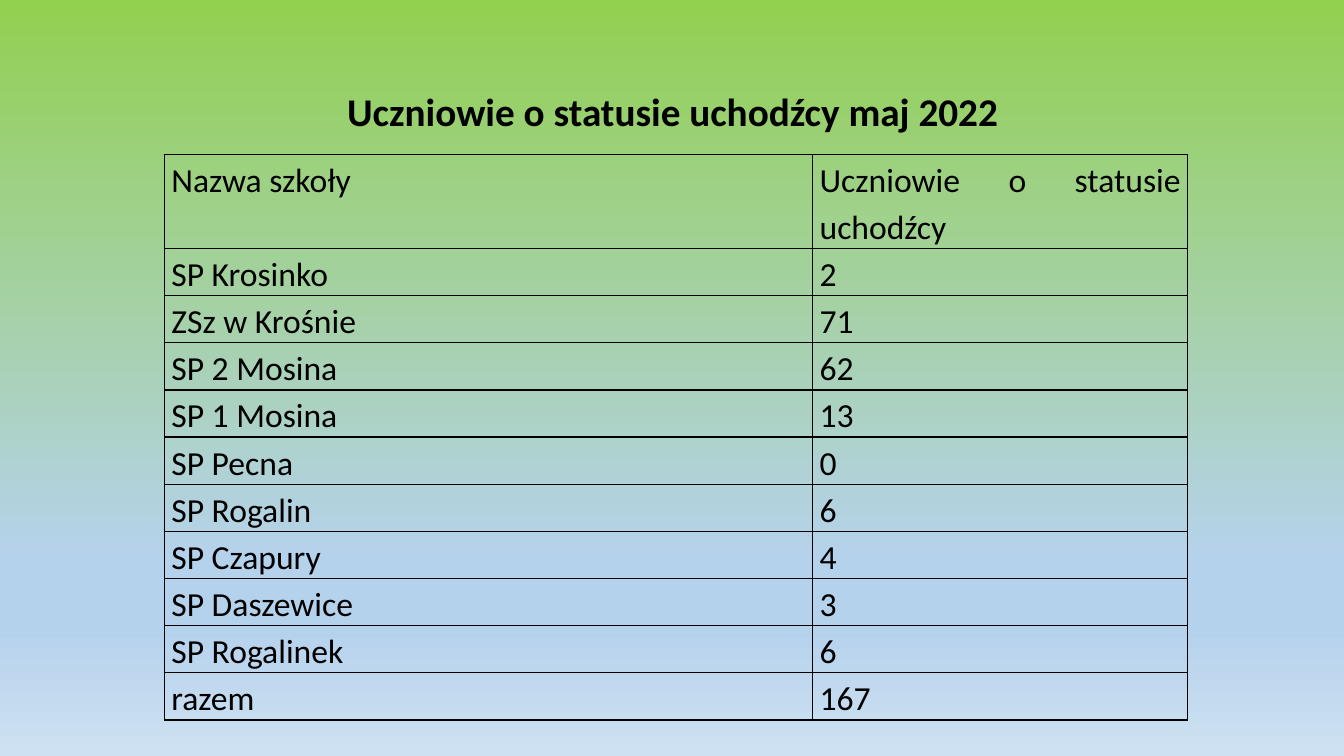
from copy import deepcopy
from dataclasses import dataclass

from pptx import Presentation
from pptx.dml.color import RGBColor as RGB
from pptx.enum.text import MSO_ANCHOR as ANCHOR, PP_ALIGN as ALIGN
from pptx.oxml import parse_xml
from pptx.oxml.ns import nsdecls, qn
from pptx.util import Inches, Pt


@dataclass(frozen=True)
class Theme:
    font: str = "Calibri"
    text: str = "000000"
    border: str = "000000"
    border_width: int = Pt(1)
    title_size: int = 28
    table_size: int = 24
    background: tuple = ((0, "92D050"), (0.74, "B5D2EC"),
                         (0.83, "B5D2EC"), (1, "CEE1F2"))


TITLE = "Uczniowie o statusie uchodźcy maj 2022"
SCHOOLS = [
    ("Nazwa szkoły", "Uczniowie o statusie uchodźcy"),
    ("SP Krosinko", "2"),
    ("ZSz w Krośnie", "71"),
    ("SP 2 Mosina", "62"),
    ("SP 1 Mosina", "13"),
    ("SP Pecna", "0"),
    ("SP Rogalin", "6"),
    ("SP Czapury", "4"),
    ("SP Daszewice", "3"),
    ("SP Rogalinek", "6"),
    ("razem", "167"),
]


class SlideBuilder:
    def __init__(self, slide, theme):
        self.s = slide
        self.theme = theme

    def background(self):
        fill = self.s.background.fill
        fill.gradient()
        fill.gradient_angle = 270
        stop_list = self.s.element.find(".//" + qn("a:gsLst"))
        for _ in range(len(self.theme.background) - len(stop_list)):
            stop_list.append(deepcopy(stop_list[0]))
        for stop, (position, color) in zip(fill.gradient_stops, self.theme.background):
            stop.position = position
            stop.color.rgb = RGB.from_string(color)

    def format_paragraph(self, p, size, align, spacing, bold=False):
        p.alignment = align
        p.line_spacing = spacing
        for r in p.runs:
            r.font.name = self.theme.font
            r.font.size = Pt(size)
            r.font.bold = bold
            r.font.color.rgb = RGB.from_string(self.theme.text)

    def title(self, text, left, top, width, height):
        sp = self.s.shapes.title
        sp.left, sp.top = Inches(left), Inches(top)
        sp.width, sp.height = Inches(width), Inches(height)
        tf = sp.text_frame
        tf.text = text
        tf.word_wrap = True
        tf.vertical_anchor = ANCHOR.MIDDLE
        self.format_paragraph(tf.paragraphs[0], self.theme.title_size,
                              ALIGN.CENTER, 0.9, bold=True)

    def cell_borders(self, cell):
        tc_pr = cell._tc.get_or_add_tcPr()
        for side in ("lnL", "lnR", "lnT", "lnB"):
            tc_pr.append(parse_xml(
                f'<a:{side} {nsdecls("a")} w="{self.theme.border_width}"><a:solidFill>'
                f'<a:srgbClr val="{self.theme.border}"/></a:solidFill></a:{side}>'))

    def cell(self, cell, text):
        self.cell_borders(cell)
        cell.fill.background()
        cell.margin_left = cell.margin_right = Inches(0.07)
        cell.margin_top = cell.margin_bottom = 0
        cell.text_frame.text = text
        p = cell.text_frame.paragraphs[0]
        p.space_after = Pt(10)
        self.format_paragraph(p, self.theme.table_size, ALIGN.JUSTIFY, 1.15)

    def table(self, rows, left, top, col_widths, header_height, row_height, height):
        frame = self.s.shapes.add_table(
            len(rows), len(col_widths), Inches(left), Inches(top),
            Inches(sum(col_widths)), Inches(height))
        table = frame.table
        table.first_row = table.horz_banding = False
        for column, width in zip(table.columns, col_widths):
            column.width = Inches(width)
        for i, (row, texts) in enumerate(zip(table.rows, rows)):
            row.height = Inches(row_height if i else header_height)
            for cell, text in zip(row.cells, texts):
                self.cell(cell, text)
        frame.height = Inches(height)


def main():
    prs = Presentation()
    prs.slide_width, prs.slide_height = Inches(13.33), Inches(7.5)
    title_only = prs.slide_layouts[5]
    builder = SlideBuilder(prs.slides.add_slide(title_only), Theme())
    builder.background()
    builder.table(SCHOOLS, 1.63, 1.53, (6.43, 3.72),
                  header_height=0.56, row_height=0.41, height=5.52)
    builder.title(TITLE, 0.92, 0.4, 11.5, 1.45)
    prs.save("out.pptx")


if __name__ == "__main__":
    main()
